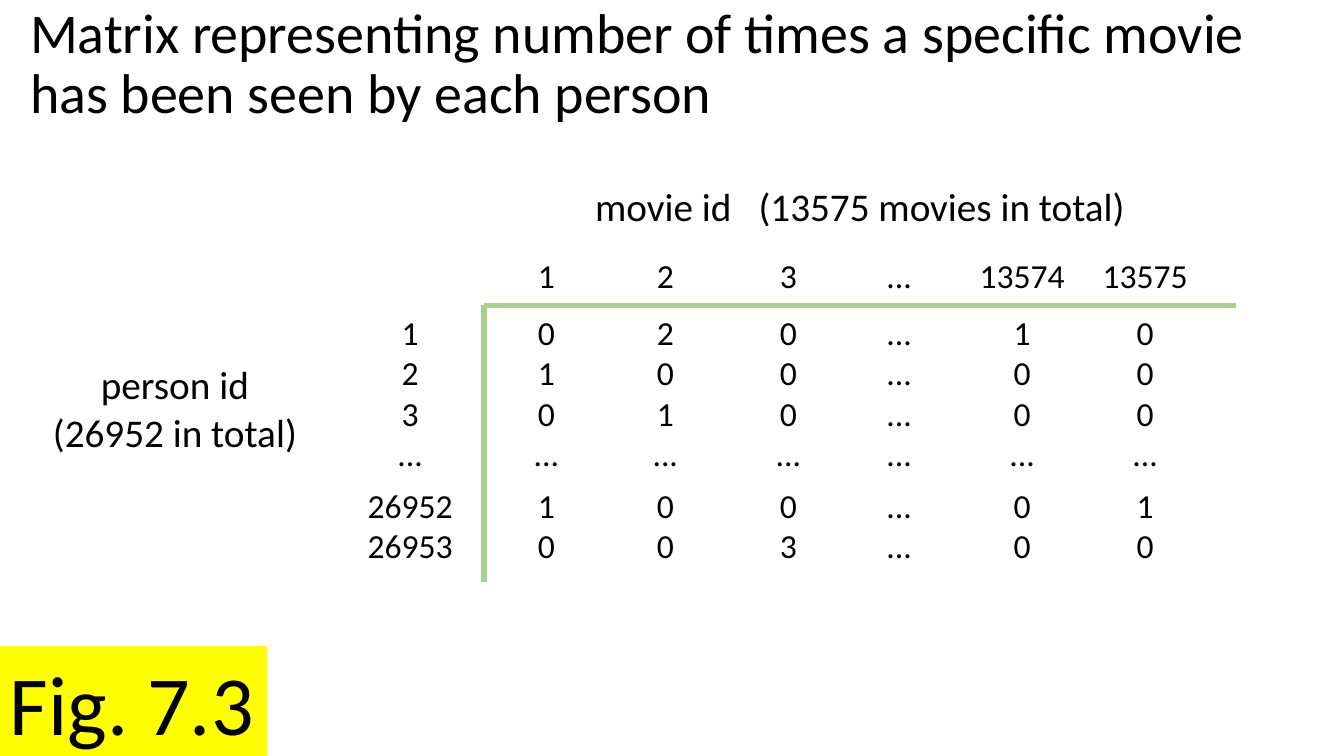
import pptx
import pptx.dml.color
import pptx.enum.shapes
import pptx.enum.text
import pptx.oxml
import pptx.oxml.ns
import pptx.util
import lxml.etree

Inches = pptx.util.Inches
Pt = pptx.util.Pt
CENTER = pptx.enum.text.PP_ALIGN.CENTER
LEFT = pptx.enum.text.PP_ALIGN.LEFT


class SlideBuilder:
    font = "Calibri"
    colors = {"text": "000000", "label": "FFFF00", "rule": "A9D18E"}

    def __init__(self, slide):
        self.slide = slide

    def color(self, name):
        return pptx.dml.color.RGBColor.from_string(self.colors[name])

    def add_tabs(self, paragraph, stops):
        properties = paragraph._p.get_or_add_pPr()
        tab_list = lxml.etree.SubElement(properties, pptx.oxml.ns.qn("a:tabLst"))
        for stop in stops:
            tab = lxml.etree.SubElement(tab_list, pptx.oxml.ns.qn("a:tab"))
            tab.set("pos", str(Inches(stop)))
            tab.set("algn", "ctr")

    def text(self, box, lines, size, align=LEFT, spacing=None, after=None, tabs=(), fill=None, wrap=True):
        shape = self.slide.shapes.add_textbox(*[Inches(value) for value in box])
        if fill:
            shape.fill.solid()
            shape.fill.fore_color.rgb = self.color(fill)
        frame = shape.text_frame
        frame.word_wrap = wrap
        frame.text = "\n".join(lines)
        for index, paragraph in enumerate(frame.paragraphs):
            paragraph.alignment = align
            if spacing:
                paragraph.line_spacing = spacing
            if after and index in after:
                paragraph.space_after = Pt(after[index])
            if tabs:
                self.add_tabs(paragraph, tabs)
            for run in paragraph.runs:
                run.font.name = self.font
                run.font.size = Pt(size)
                run.font.color.rgb = self.color("text")

    def line(self, start, end, width):
        connector = self.slide.shapes.add_connector(
            pptx.enum.shapes.MSO_CONNECTOR.STRAIGHT,
            *[Inches(value) for value in (*start, *end)])
        connector.line.color.rgb = self.color("rule")
        connector.line.width = Pt(width)
        lxml.etree.SubElement(connector._element.spPr, pptx.oxml.ns.qn("a:effectLst"))


def main():
    presentation = pptx.Presentation()
    presentation.slide_width = Inches(13.33)
    presentation.slide_height = Inches(7.5)
    builder = SlideBuilder(presentation.slides.add_slide(presentation.slide_layouts[6]))

    builder.text((0, 6.41, 2.65, 1.11), ["Fig. 7.3"], 60, fill="label", wrap=False)
    builder.text(
        (0.2, 0, 12.77, 1.71),
        ["Matrix representing number of times a specific movie has been seen by each person"],
        40, spacing=0.9)

    matrix = [
        ["", "1", "2", "3", "...", "13574", "13575"],
        ["1", "0", "2", "0", "...", "1", "0"],
        ["2", "1", "0", "0", "...", "0", "0"],
        ["3", "0", "1", "0", "...", "0", "0"],
        ["..."] * 7,
        ["26952", "1", "0", "0", "...", "0", "1"],
        ["26953", "0", "0", "3", "...", "0", "0"],
    ]
    column_stops = [0.77, 2.12, 3.3, 4.52, 5.62, 6.84, 8.06]
    builder.text(
        (3.2, 2.48, 9.46, 3.21),
        ["\t" + "\t".join(row) for row in matrix],
        24, after={0: 12, 4: 8}, tabs=column_stops)

    builder.text(
        (5.69, 1.76, 5.68, 0.57),
        ["\tmovie id\t(13575 movies in total)"], 28, tabs=[0.79, 3.55])
    builder.text(
        (0.07, 3.53, 3.33, 1.04),
        ["person id", "(26952 in total)"], 28, align=CENTER)

    corner = (4.8, 3.03)
    for end in ((12.26, 3.03), (4.8, 5.77)):
        builder.line(corner, end, 4)

    presentation.save("out.pptx")


if __name__ == "__main__":
    main()
